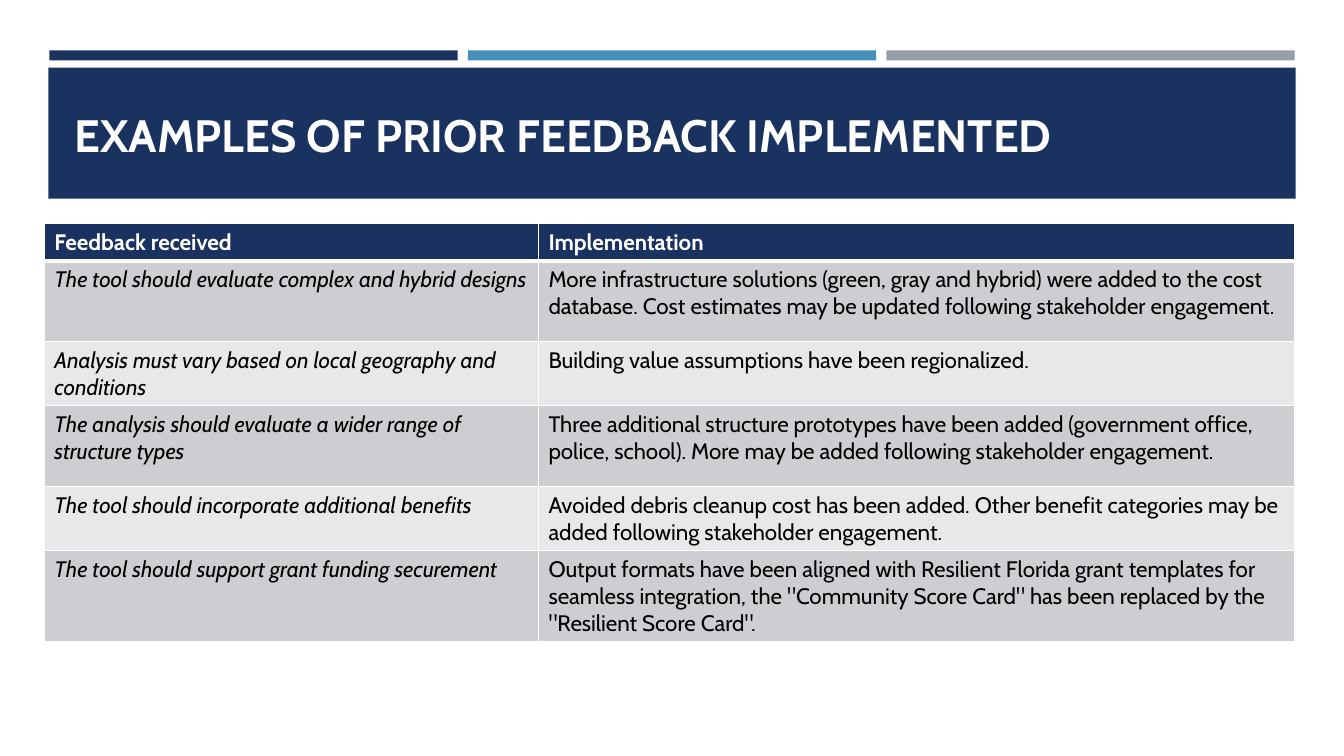
from pptx import Presentation
from pptx.dml.color import RGBColor
from pptx.enum.shapes import MSO_SHAPE
from pptx.enum.text import MSO_ANCHOR, MSO_AUTO_SIZE, PP_ALIGN
from pptx.oxml import parse_xml
from pptx.oxml.ns import nsdecls
from pptx.util import Inches, Pt

# Content
TITLE = "EXAMPLES OF PRIOR FEEDBACK IMPLEMENTED"
ROWS = [
    ("Feedback received", "Implementation"),
    ("The tool should evaluate complex and hybrid designs",
     "More infrastructure solutions (green, gray and hybrid) were added to the cost database. "
     "Cost estimates may be updated following stakeholder engagement."),
    ("Analysis must vary based on local geography and conditions",
     "Building value assumptions have been regionalized."),
    ("The analysis should evaluate a wider range of structure types",
     "Three additional structure prototypes have been added (government office, police, school). "
     "More may be added following stakeholder engagement."),
    ("The tool should incorporate additional benefits",
     "Avoided debris cleanup cost has been added. Other benefit categories may be added "
     "following stakeholder engagement."),
    ("The tool should support grant funding securement",
     "Output formats have been aligned with Resilient Florida grant templates for seamless "
     "integration, the \"Community Score Card\" has been replaced by the \"Resilient Score Card\"."),
]

# Style
FONT = "Cabin"
NAVY = RGBColor(0x1A, 0x32, 0x60)
BLUE = RGBColor(0x45, 0x90, 0xB8)
GRAY = RGBColor(0x96, 0x9F, 0xA7)
DARK_BAND = RGBColor(0xCD, 0xCE, 0xD2)
LIGHT_BAND = RGBColor(0xE8, 0xE8, 0xEA)
WHITE = RGBColor(0xFF, 0xFF, 0xFF)
BLACK = RGBColor(0, 0, 0)

# Grid, in inches
BAR_LEFT, BAR_TOP, BAR_W, BAR_H, BAR_STEP = 0.49, 0.5, 4.05, 0.1, 4.15
COLS = (4.9, 7.5)
HEADER_H, TALL_H, SHORT_H = 0.32, 0.8, 0.56


def add_bar(shapes, x, y, w, h, color):
    sp = shapes.add_shape(MSO_SHAPE.RECTANGLE, Inches(x), Inches(y), Inches(w), Inches(h))
    sp.fill.solid()
    sp.fill.fore_color.rgb = color
    sp.line.fill.background()
    sp.shadow.inherit = False


def add_borders(cell, bottom):
    tc_pr = cell._tc.get_or_add_tcPr()
    widths = {"lnL": 1, "lnR": 1, "lnT": 1, "lnB": bottom}
    for i, (side, width) in enumerate(widths.items()):
        tc_pr.insert(i, parse_xml(
            f'<a:{side} {nsdecls("a")} w="{Pt(width)}"><a:solidFill>'
            f'<a:srgbClr val="{WHITE}"/></a:solidFill></a:{side}>'))


def set_font(p, size, color, bold=False, italic=False):
    f = p.font
    f.name, f.size, f.bold, f.italic = FONT, Pt(size), bold, italic
    f.color.rgb = color


prs = Presentation()
prs.slide_width, prs.slide_height = Inches(13.33), Inches(7.5)
s = prs.slides.add_slide(prs.slide_layouts[5])

# Accent bars and title band
for i, color in enumerate((NAVY, BLUE, GRAY)):
    add_bar(s.shapes, BAR_LEFT + i * BAR_STEP, BAR_TOP, BAR_W, BAR_H, color)
add_bar(s.shapes, 0.48, 0.67, 12.37, 1.3, NAVY)

# Title, brought in front of its band
title = s.shapes.title
title.element.getparent().append(title.element)
title.left, title.top, title.width, title.height = map(Inches, (0.64, 0.77, 12.06, 0.88))
tf = title.text_frame
tf.text = TITLE
tf.word_wrap = True
tf.auto_size = MSO_AUTO_SIZE.NONE
tf.vertical_anchor = MSO_ANCHOR.BOTTOM
p = tf.paragraphs[0]
p.alignment = PP_ALIGN.LEFT
set_font(p, 32.4, WHITE, bold=True)

# Feedback table
heights = [HEADER_H] + [TALL_H if i % 2 else SHORT_H for i in range(1, len(ROWS))]
table = s.shapes.add_table(len(ROWS), len(COLS), Inches(0.44), Inches(2.22),
                           Inches(sum(COLS)), Inches(sum(heights))).table
for col, width in zip(table.columns, COLS):
    col.width = Inches(width)
for r, (texts, height) in enumerate(zip(ROWS, heights)):
    table.rows[r].height = Inches(height)
    header = r == 0
    for c, text in enumerate(texts):
        cell = table.cell(r, c)
        cell.text = text
        cell.fill.solid()
        cell.fill.fore_color.rgb = NAVY if header else DARK_BAND if r % 2 else LIGHT_BAND
        add_borders(cell, bottom=3 if header else 1)
        set_font(cell.text_frame.paragraphs[0], 16, WHITE if header else BLACK,
                 bold=header, italic=not header and c == 0)

prs.save("out.pptx")
